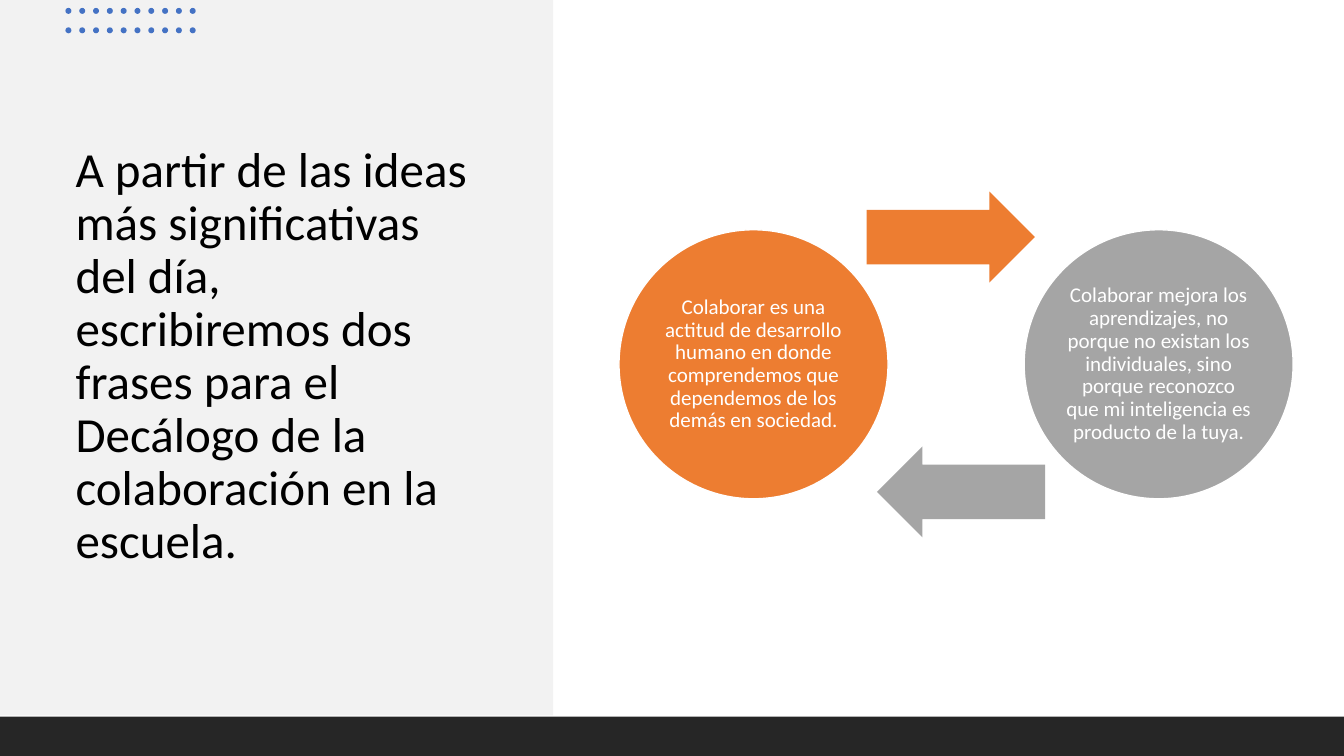
from dataclasses import dataclass

from pptx import Presentation
from pptx import util as u
from pptx.dml import color
from pptx.enum import shapes, text


@dataclass(frozen=True)
class Theme:
    font: str = "Calibri"
    title_size: int = 35
    body_size: int = 15
    black: str = "000000"
    white: str = "FFFFFF"
    panel: str = "F2F2F2"
    footer: str = "262626"
    blue: str = "4472C4"
    orange: str = "ED7D31"
    gray: str = "A5A5A5"


theme = Theme()
KIND = shapes.MSO_SHAPE


def add_figure(parent, kind, left, top, width, height, fill, outline=None):
    """Add a preset shape, measured in centimetres."""
    figure = parent.shapes.add_shape(kind, u.Cm(left), u.Cm(top), u.Cm(width), u.Cm(height))
    figure.shadow.inherit = False
    figure.fill.solid()
    figure.fill.fore_color.rgb = color.RGBColor.from_string(fill)
    if outline:
        figure.line.color.rgb = color.RGBColor.from_string(outline)
        figure.line.width = u.Pt(1)
    else:
        figure.line.fill.background()
    return figure


def write(box, words, *, size, ink, align, inset=None):
    """Fill a box with one paragraph, centred vertically."""
    frame = box.text_frame
    frame.word_wrap = True
    frame.auto_size = text.MSO_AUTO_SIZE.NONE
    frame.vertical_anchor = text.MSO_ANCHOR.MIDDLE
    if inset is not None:
        frame.margin_left = frame.margin_right = u.Cm(inset)
        frame.margin_top = frame.margin_bottom = u.Cm(inset)
    para = frame.paragraphs[0]
    para.alignment = align
    para.line_spacing = 0.9
    span = para.add_run()
    span.text = words
    span.font.name = theme.font
    span.font.size = u.Pt(size)
    span.font.color.rgb = color.RGBColor.from_string(ink)


deck = Presentation()
deck.slide_width, deck.slide_height = u.Cm(33.87), u.Cm(19.05)
page = deck.slides.add_slide(deck.slide_layouts[5])

# Left panel with the title in front of it
panel = add_figure(page, KIND.RECTANGLE, 0, 0, 13.94, 18.03, theme.panel)
title = page.shapes.title
title.left, title.top = u.Cm(1.65), u.Cm(3.35)
title.width, title.height = u.Cm(10.77), u.Cm(11.3)
write(
    title,
    "A partir de las ideas más significativas del día, escribiremos dos frases "
    "para el Decálogo de la colaboración en la escuela.",
    size=theme.title_size, ink=theme.black, align=text.PP_ALIGN.LEFT,
)
panel.element.addnext(title.element)

# Dot grid: two rows of ten
dots = page.shapes.add_group_shape()
for row in range(2):
    for column in range(10):
        add_figure(dots, KIND.OVAL, 1.65 + 0.348 * column, 0.2 + 0.49 * row,
                   0.15, 0.15, theme.blue)

# Footer band
add_figure(page, KIND.RECTANGLE, 0, 18.06, 33.87, 0.99, theme.footer)

# Cycle: each circle with the arrow that leaves it
ideas = [
    ("Colaborar es una actitud de desarrollo humano en donde comprendemos que "
     "dependemos de los demás en sociedad.",
     theme.orange, 15.6, (21.84, 4.83), 0),
    ("Colaborar mejora los aprendizajes, no porque no existan los individuales, "
     "sino porque reconozco que mi inteligencia es producto de la tuya.",
     theme.gray, 25.81, (22.1, 11.25), 180),
]
cycle = page.shapes.add_group_shape()
for words, fill, left, (arrow_left, arrow_top), turn in ideas:
    circle = add_figure(cycle, KIND.OVAL, left, 5.79, 6.78, 6.78, fill, outline=theme.white)
    write(circle, words, size=theme.body_size, ink=theme.white,
          align=text.PP_ALIGN.CENTER, inset=0.05)
    arrow = add_figure(cycle, KIND.RIGHT_ARROW, arrow_left, arrow_top, 4.24, 2.29, fill)
    arrow.adjustments[0] = 0.6
    arrow.adjustments[1] = 0.5
    arrow.rotation = turn

deck.save("out.pptx")
